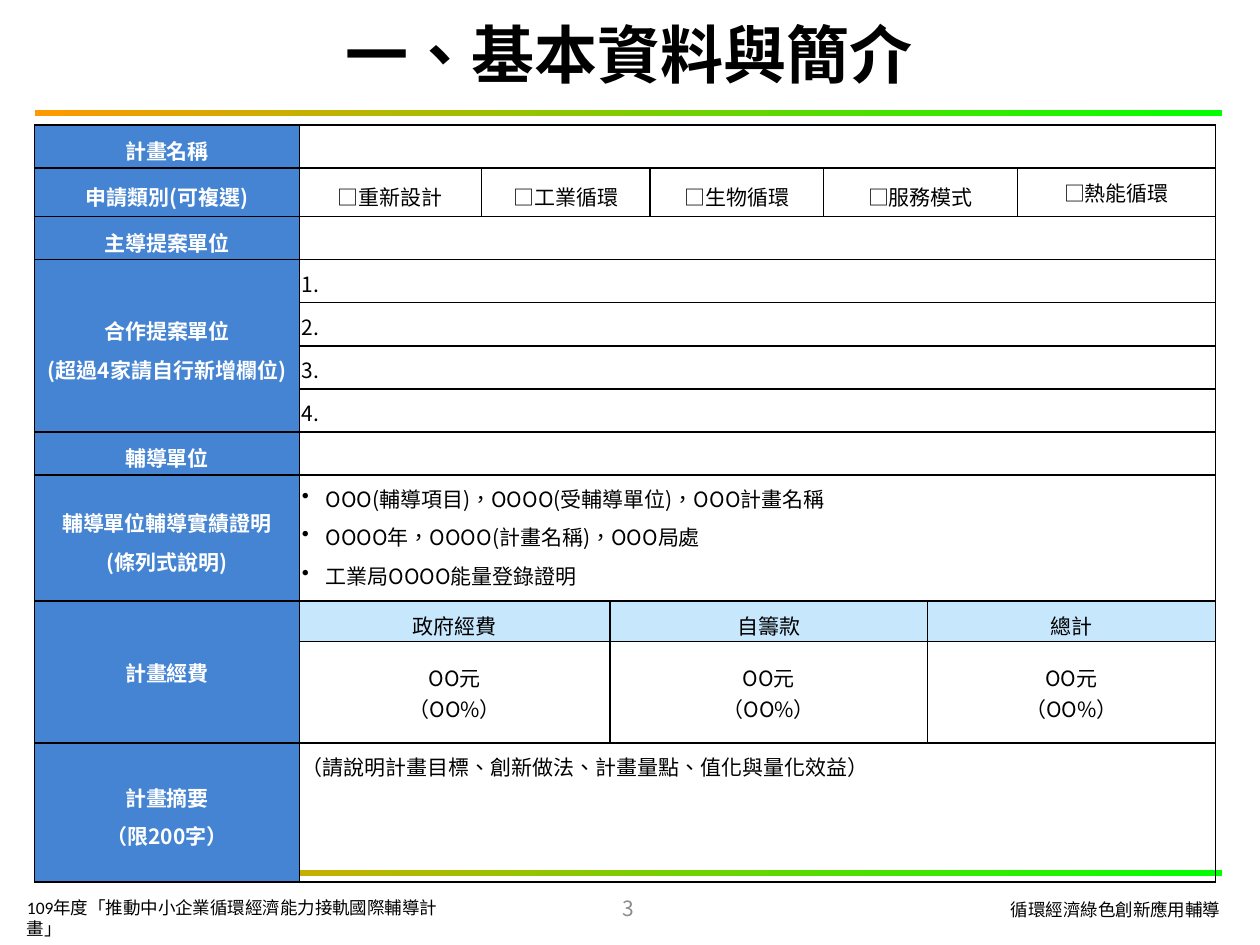
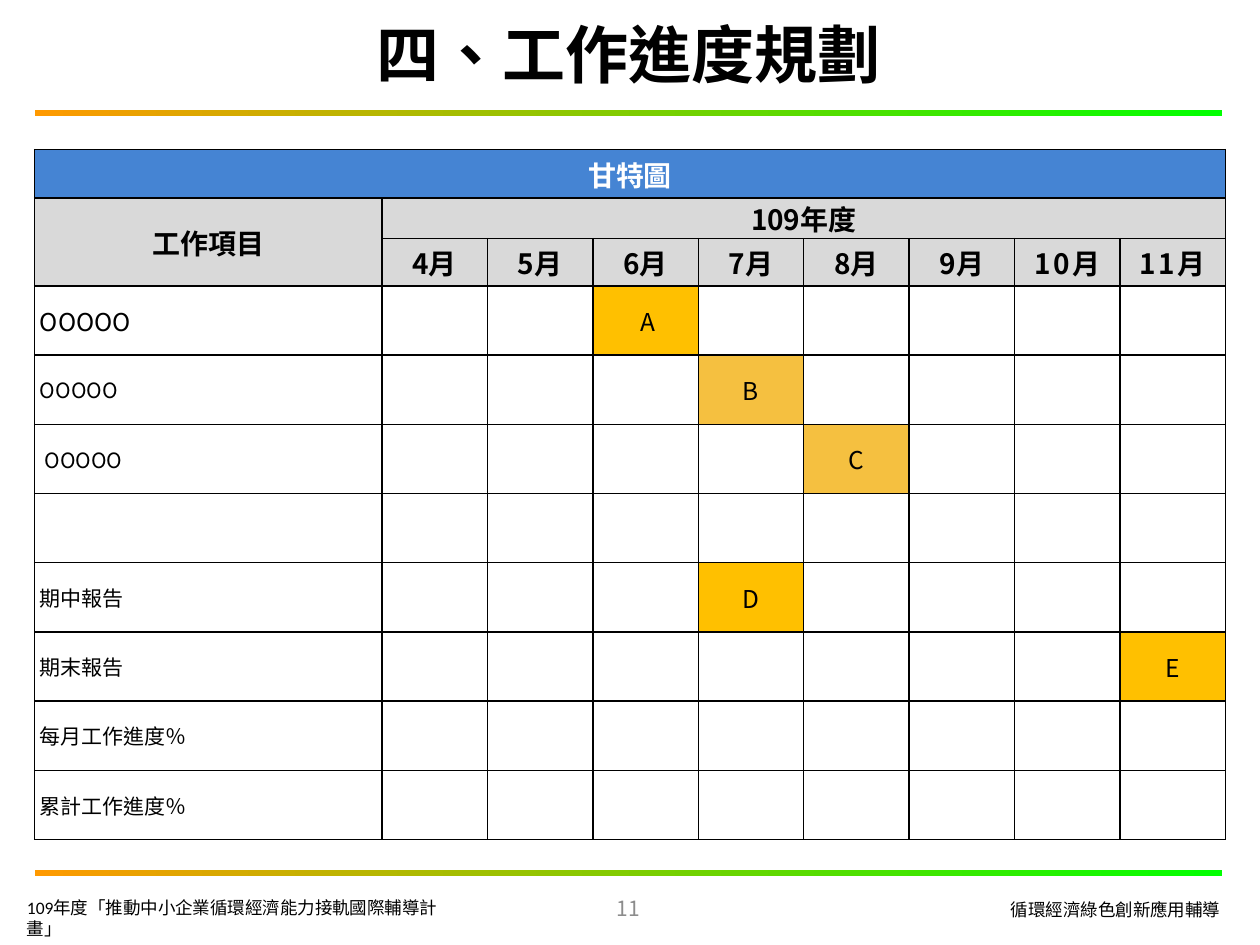
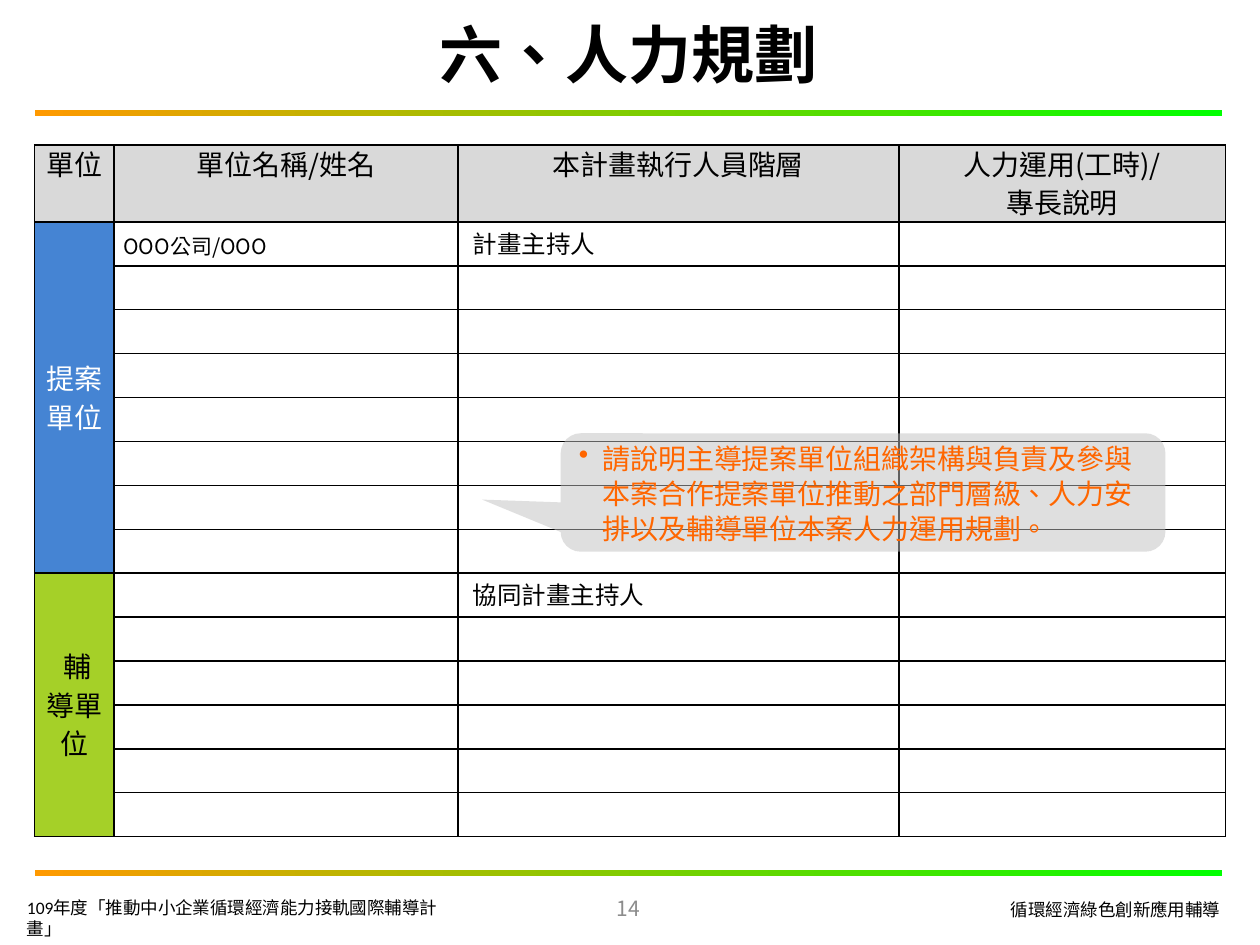
from dataclasses import dataclass

from lxml import etree
from pptx import Presentation
from pptx.dml.color import RGBColor
from pptx.enum import lang, shapes, text
from pptx.oxml import ns
from pptx.util import Pt


@dataclass(frozen=True)
class Theme:
    font: str = "Noto Sans CJK SC"
    footer_font: str = "Calibri"
    black: str = "000000"
    white: str = "FFFFFF"
    grey_text: str = "8C8C8C"
    blue: str = "4584D3"
    pale_blue: str = "C6E7FC"
    grey: str = "D9D9D9"
    green: str = "A5D028"
    gold: str = "FFC000"
    soft_gold: str = "F5C040"
    orange: str = "FF6600"
    callout: str = "C0C0C0"
    band: tuple = ("FF9900", "00FF00")
    title_size: int = 36
    heading_size: int = 16
    mark_size: int = 14
    body_size: int = 12
    footer_size: int = 10


theme = Theme()
CENTER, RIGHT, JUSTIFY = text.PP_ALIGN.CENTER, text.PP_ALIGN.RIGHT, text.PP_ALIGN.JUSTIFY
MIDDLE = text.MSO_ANCHOR.MIDDLE


def write(frame, words, size=theme.body_size, color=theme.black, bold=False,
          align=None, spacing=None, bullet=False, font=theme.font):
    """Fill an empty text frame, one paragraph for each line of words."""
    frame.word_wrap = True
    for index, line in enumerate(words.split("\n")):
        paragraph = frame.add_paragraph() if index else frame.paragraphs[0]
        if bullet:
            properties = paragraph._p.get_or_add_pPr()
            properties.set("marL", str(Pt(13.5)))
            properties.set("indent", str(-Pt(13.5)))
            etree.SubElement(properties, ns.qn("a:buChar"), char="•")
        if line:
            paragraph.add_run().text = line
        paragraph.alignment = align
        if spacing:
            paragraph.line_spacing = Pt(spacing)
        paragraph.font.name = font
        paragraph.font.size = Pt(size)
        paragraph.font.bold = bold
        paragraph.font.color.rgb = RGBColor.from_string(color)
        paragraph.font.language_id = lang.MSO_LANGUAGE_ID.TRADITIONAL_CHINESE


def add_grid(slide, top, widths, heights, margins, cells, spans, spacing=None):
    """Add a bordered table; cells maps (row, column) to words and style."""
    table = slide.shapes.add_table(
        len(heights), len(widths), Pt(19.8), Pt(top), Pt(sum(widths)), Pt(sum(heights))).table
    for column, width in zip(table.columns, widths):
        column.width = Pt(width)
    for row, height in zip(table.rows, heights):
        row.height = Pt(height)
    for r in range(len(heights)):
        for c in range(len(widths)):
            cell = table.cell(r, c)
            style = {"words": "", "spacing": spacing, **cells.get((r, c), {})}
            fill, vertical = style.pop("fill", None), style.pop("vertical", False)
            side, edge = style.pop("margins", margins)
            cell.margin_left = cell.margin_right = Pt(side)
            cell.margin_top = cell.margin_bottom = Pt(edge)
            cell.vertical_anchor = style.pop("anchor", None)
            if fill:
                cell.fill.solid()
                cell.fill.fore_color.rgb = RGBColor.from_string(fill)
            else:
                cell.fill.background()
            properties = cell._tc.get_or_add_tcPr()
            if vertical:
                properties.set("vert", "eaVert")
            for position, border in enumerate(("a:lnL", "a:lnR", "a:lnT", "a:lnB")):
                line = etree.Element(ns.qn(border), w=str(Pt(1)))
                ink = etree.SubElement(line, ns.qn("a:solidFill"))
                etree.SubElement(ink, ns.qn("a:srgbClr"), val=theme.black)
                properties.insert(position, line)
            write(cell.text_frame, **style)
    for r, c, rows, columns in spans:
        table.cell(r, c).merge(table.cell(r + rows - 1, c + columns - 1))
    return table


deck = Presentation()
deck.slide_width, deck.slide_height = Pt(720), Pt(540)

# Title, bands and footers
pages = []
for title, number in (("一、基本資料與簡介", "3"), ("四、工作進度規劃", "11"), ("六、人力規劃", "14")):
    page = deck.slides.add_slide(deck.slide_layouts[6])
    pages.append(page)
    for band_top in (62.8, 497):
        band = page.shapes.add_shape(
            shapes.MSO_SHAPE.RECTANGLE, Pt(20), Pt(band_top), Pt(678.3), Pt(3.6))
        band.shadow.inherit = False
        band.line.fill.background()
        band.fill.gradient()
        band.fill.gradient_angle = 0
        for position, (stop, color) in enumerate(zip(band.fill.gradient_stops, theme.band)):
            stop.position = position
            stop.color.rgb = RGBColor.from_string(color)
    footer = dict(size=theme.footer_size, font=theme.footer_font)
    for place, words, anchor, style in (
        ((8.3, 509, 267, 19.4), "109年度「推動中小企業循環經濟能力接軌國際輔導計畫」", None, footer),
        ((530.3, 510, 174, 19.4), "循環經濟綠色創新應用輔導", None, dict(footer, align=RIGHT)),
        ((0, 9.4, 718.6, 42.5), title, MIDDLE,
         dict(size=theme.title_size, bold=True, align=CENTER)),
        ((275, 504.7, 168, 28.8), number, MIDDLE, dict(color=theme.grey_text, align=CENTER)),
    ):
        frame = page.shapes.add_textbox(*map(Pt, place)).text_frame
        frame.vertical_anchor = anchor
        write(frame, words, **style)
profile_page, schedule_page, staff_page = pages

# Basic data
centered = dict(align=CENTER, anchor=MIDDLE)
label = dict(centered, fill=theme.blue, color=theme.white, bold=True)
profile = {(row, 0): dict(label, words=words) for row, words in (
    (0, "計畫名稱"), (1, "申請類別(可複選)"), (2, "主導提案單位"),
    (3, "合作提案單位\n(超過4家請自行新增欄位)"), (7, "輔導單位"),
    (8, "輔導單位輔導實績證明\n(條列式說明)"), (11, "計畫摘要\n（限200字）"))}
profile[9, 0] = dict(label, words="計畫經費", spacing=18)
for column, category in ((1, "重新設計"), (2, "工業循環"), (4, "生物循環"), (5, "服務模式")):
    profile[1, column] = dict(centered, words="□" + category)
profile[1, 7] = dict(centered, words="□熱能循環", spacing=None)
for partner in range(1, 5):
    profile[2 + partner, 1] = dict(words=f"{partner}.")
profile[8, 1] = dict(bullet=True, words=(
    "OOO(輔導項目)，OOOO(受輔導單位)，OOO計畫名稱\n"
    "OOOO年，OOOO(計畫名稱)，OOO局處\n"
    "工業局OOOO能量登錄證明"))
for column, fund in ((1, "政府經費"), (3, "自籌款"), (6, "總計")):
    profile[9, column] = dict(centered, words=fund, fill=theme.pale_blue)
    profile[10, column] = dict(centered, words="OO元\n（OO%）", spacing=18)
profile[11, 1] = dict(words="（請說明計畫目標、創新做法、計畫量點、值化與量化效益）")

profile_spans = [(row, 1, 1, 7) for row in (0, 2, 3, 4, 5, 6, 7, 8, 11)]
profile_spans += [(1, 2, 1, 2), (1, 5, 1, 2), (3, 0, 4, 1), (9, 0, 2, 1)]
for row in (9, 10):
    profile_spans += [(row, 1, 1, 2), (row, 3, 1, 3), (row, 6, 1, 2)]
add_grid(profile_page, 71.3, [151.3, 104, 73.5, 23, 99, 59.5, 51.5, 113],
         [24.6, 28] + [24.6] * 6 + [72.2, 23.2, 58, 79.2], (1.4, 0),
         profile, profile_spans, spacing=22)

# Gantt chart
heading = dict(centered, size=theme.heading_size, bold=True, fill=theme.grey)
schedule = {
    (0, 0): dict(heading, words="甘特圖", fill=theme.blue, color=theme.white),
    (1, 0): dict(heading, words="工作項目"),
    (1, 1): dict(heading, words="109年度", anchor=None, margins=(0, 0)),
}
months = range(4, 12)
for column, month in enumerate(months, 1):
    schedule[2, column] = dict(heading, words=f"{month}月" if month < 10 else str(month))
tasks = ("OOOOO", "OOOOO", " OOOOO", "", "期中報告", "期末報告", "每月工作進度％", "累計工作進度％")
for row, task in enumerate(tasks, 3):
    schedule[row, 0] = dict(words=task, anchor=MIDDLE,
                            size=theme.mark_size if row == 3 else theme.body_size)
for row, month, mark, fill in (
    (3, 6, " A", theme.gold), (4, 7, "B", theme.soft_gold), (5, 8, "C", theme.soft_gold),
    (7, 7, "D", theme.gold), (8, 11, "E", theme.gold),
):
    schedule[row, month - 3] = dict(centered, words=mark, size=theme.mark_size, fill=fill)
gantt = add_grid(schedule_page, 85.5, [198.5] + [60.25] * len(months),
                 [27.7, 23.2, 27] + [39.55] * len(tasks), (3, 2),
                 schedule, [(0, 0, 1, 9), (1, 0, 2, 1), (1, 1, 1, 8)])
for column in (7, 8):
    paragraph = gantt.cell(2, column).text_frame.paragraphs[0]
    paragraph.add_run().text = "月"
    for run, tracking in zip(paragraph.runs, ("140", "-30")):
        run._r.get_or_add_rPr().set("spc", tracking)

# Staffing
staff_heads = ("單位", "單位名稱/姓名", "本計畫執行人員階層", "人力運用(工時)/\n專長說明")
staff = {(0, column): dict(words=words, size=theme.heading_size, align=CENTER, fill=theme.grey)
         for column, words in enumerate(staff_heads)}
unit = dict(centered, size=theme.heading_size, vertical=True)
role = dict(size=theme.mark_size, align=JUSTIFY)
staff[1, 0] = dict(unit, words="提案單位", color=theme.white, fill=theme.blue)
staff[1, 1] = dict(words="OOO公司/OOO", align=JUSTIFY)
staff[1, 2] = dict(role, words=" 計畫主持人")
staff[9, 0] = dict(unit, words=" 輔導單位", fill=theme.green)
staff[9, 2] = dict(role, words=" 協同計畫主持人")
add_grid(staff_page, 82.8, [45.4, 196.5, 252, 186.5], [44] + [25.1] * 14, (5.3, 0),
         staff, [(1, 0, 8, 1), (9, 0, 6, 1)], spacing=22)

advice = staff_page.shapes.add_shape(
    shapes.MSO_SHAPE.ROUNDED_RECTANGULAR_CALLOUT, Pt(320.4), Pt(247.6), Pt(345.6), Pt(67.7))
for index, value in enumerate((-0.63, 0.06, 0.17)):
    advice.adjustments[index] = value
advice.shadow.inherit = False
advice.line.fill.background()
advice.fill.solid()
advice.fill.fore_color.rgb = RGBColor.from_string(theme.callout)
tint = advice.fill._xPr.find(".//" + ns.qn("a:srgbClr"))
etree.SubElement(tint, ns.qn("a:alpha"), val="50000")
advice.text_frame.vertical_anchor = MIDDLE
write(advice.text_frame,
      "請說明主導提案單位組織架構與負責及參與本案合作提案單位推動之部門層級、"
      "人力安排以及輔導單位本案人力運用規劃。",
      size=theme.heading_size, color=theme.orange, align=text.PP_ALIGN.LEFT,
      spacing=20, bullet=True)

deck.save("out.pptx")
